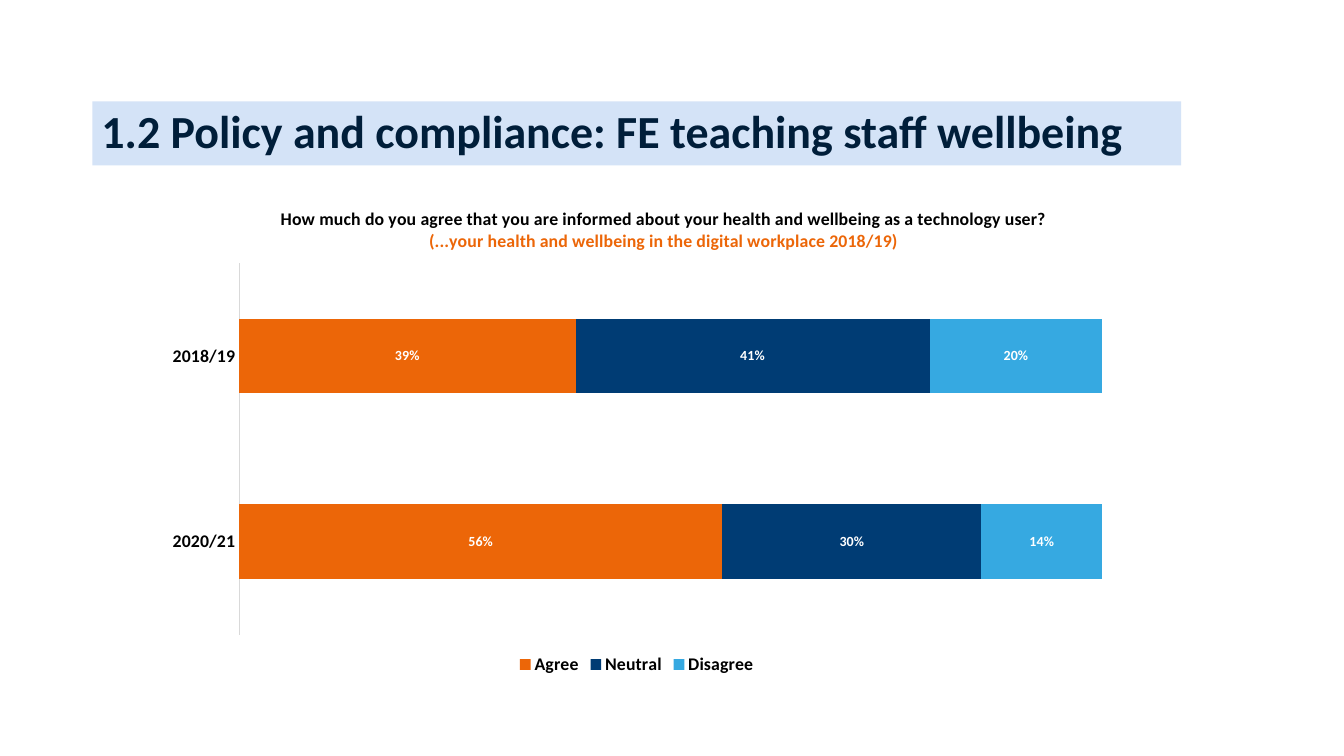
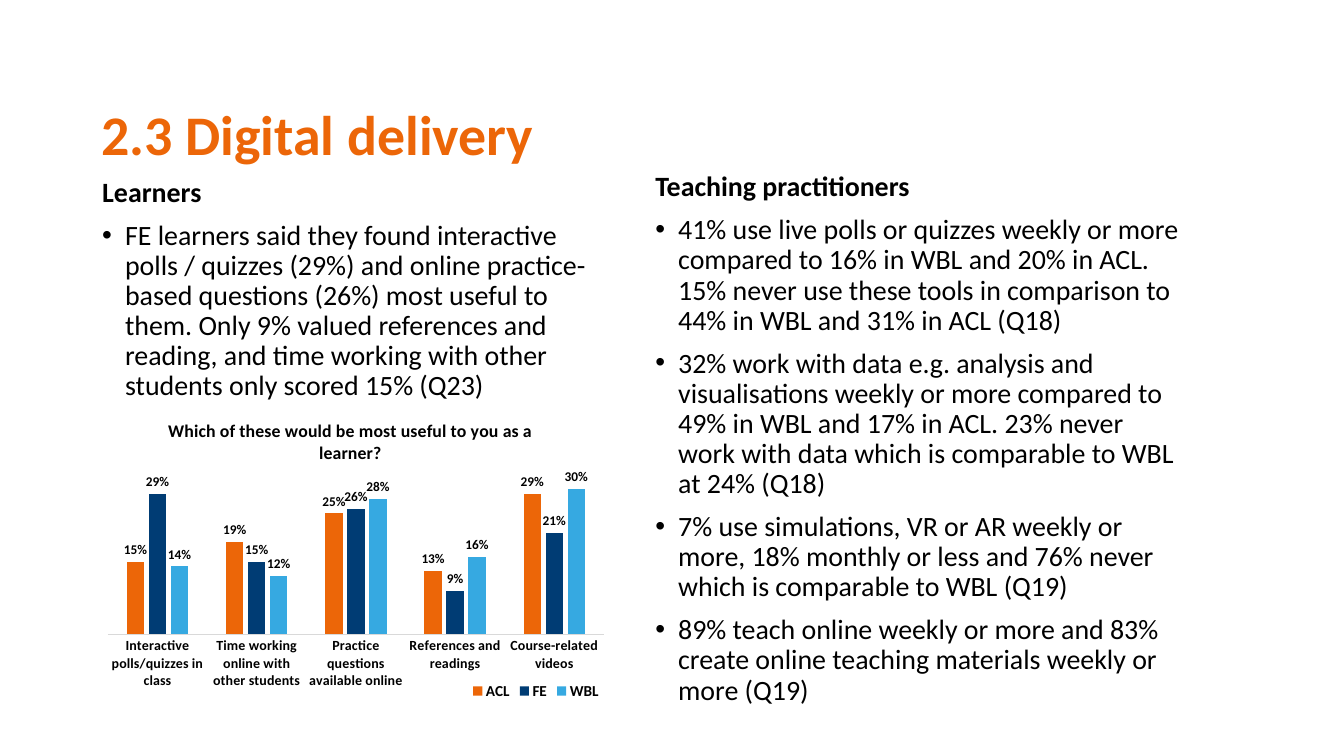
from dataclasses import dataclass

from lxml import etree
from pptx import Presentation
from pptx.chart.data import CategoryChartData
from pptx.dml.color import RGBColor
from pptx.enum.chart import XL_CHART_TYPE, XL_LABEL_POSITION, XL_LEGEND_POSITION, XL_TICK_MARK
from pptx.enum.text import MSO_ANCHOR, MSO_AUTO_SIZE, PP_ALIGN
from pptx.oxml.ns import qn
from pptx.util import Inches, Pt

STACKED, CLUSTERED = XL_CHART_TYPE.BAR_STACKED, XL_CHART_TYPE.COLUMN_CLUSTERED
CENTER, OUTSIDE = XL_LABEL_POSITION.CENTER, XL_LABEL_POSITION.OUTSIDE_END
BOTTOM, NO_TICK = XL_LEGEND_POSITION.BOTTOM, XL_TICK_MARK.NONE
LEFT, MIDDLE, TOP = PP_ALIGN.LEFT, MSO_ANCHOR.MIDDLE, MSO_ANCHOR.TOP
NO_FIT = MSO_AUTO_SIZE.NONE

FONT = "Calibri"
COLORS = {
    "ink": "000000", "white": "FFFFFF", "midnight": "001E3A", "band": "D4E3F7",
    "orange": "EC6608", "navy": "003C74", "sky": "36A9E1", "axis": "D9D9D9",
}
SERIES_COLORS = ("orange", "navy", "sky")


@dataclass(frozen=True)
class Box:
    left: float
    top: float
    width: float
    height: float

    def lengths(self) -> tuple:
        return tuple(Inches(n) for n in (self.left, self.top, self.width, self.height))


@dataclass(frozen=True)
class ChartSpec:
    kind: int
    box: Box
    title: tuple          # (line, colour) pairs
    categories: tuple
    series: dict
    plot: Box             # fractions of the chart area
    title_corner: tuple
    gap: int
    overlap: int
    maximum: float
    axis_size: float
    legend_size: float
    label_size: float
    label_color: str
    label_position: int
    reverse: bool = False
    legend_corner: tuple = ()


@dataclass(frozen=True)
class TextColumn:
    box: Box
    heading: str
    bullets: tuple


def rgb(name: str) -> RGBColor:
    return RGBColor.from_string(COLORS[name])


def format_font(font, size: float, color: str = "ink", bold: bool = True) -> None:
    font.name, font.size, font.bold = FONT, Pt(size), bold
    font.color.rgb = rgb(color)


def write_text(paragraph, text: str, *, size: float, color: str = "ink", bold: bool = True,
               spacing: float = 0.9, before: float = 0, bullet: bool = False) -> None:
    """Fill one paragraph with formatted text."""
    if bullet:
        properties = paragraph._p.get_or_add_pPr()
        properties.set("marL", str(Inches(0.25)))
        properties.set("indent", str(-Inches(0.25)))
        etree.SubElement(properties, qn("a:buFont")).set("typeface", "Arial")
        etree.SubElement(properties, qn("a:buChar")).set("char", "•")
    paragraph.line_spacing = spacing
    paragraph.space_before = Pt(before)
    run = paragraph.add_run()
    run.text = text
    format_font(run.font, size, color, bold)


def add_titled_slide(presentation, text: str, box: Box, size: float, color: str,
                     band: bool = False):
    """Add a title-only slide and style its title."""
    slide = presentation.slides.add_slide(presentation.slide_layouts[5])
    title = slide.shapes.title
    title.left, title.top, title.width, title.height = box.lengths()
    if band:
        title.fill.solid()
        title.fill.fore_color.rgb = rgb("band")
    frame = title.text_frame
    frame.auto_size, frame.vertical_anchor, frame.word_wrap = NO_FIT, MIDDLE, True
    paragraph = frame.paragraphs[0]
    paragraph.alignment = LEFT
    write_text(paragraph, text, size=size, color=color)
    return slide


def add_text_column(slide, column: TextColumn) -> None:
    frame = slide.shapes.add_textbox(*column.box.lengths()).text_frame
    frame.word_wrap, frame.auto_size, frame.vertical_anchor = True, NO_FIT, TOP
    write_text(frame.paragraphs[0], column.heading, size=22)
    for text in column.bullets:
        write_text(frame.add_paragraph(), text, size=22, bold=False, before=10, bullet=True)


def set_layout(element, index: int, **fractions: float) -> None:
    """Give a chart part a manual position in fractions of the chart area."""
    for old in element.findall(qn("c:layout")):
        element.remove(old)
    layout = etree.Element(qn("c:layout"))
    manual = etree.SubElement(layout, qn("c:manualLayout"))
    values = {"xMode": "edge", "yMode": "edge", **fractions}
    if "w" in fractions:
        values = {"layoutTarget": "inner", **values}
    for tag, value in values.items():
        etree.SubElement(manual, qn(f"c:{tag}")).set("val", str(value))
    element.insert(index, layout)


def add_survey_chart(slide, spec: ChartSpec) -> None:
    data = CategoryChartData(number_format="0%")
    data.categories = spec.categories
    for name, values in spec.series.items():
        data.add_series(name, values)
    chart = slide.shapes.add_chart(spec.kind, *spec.box.lengths(), data).chart
    format_font(chart.font, 10, bold=False)

    # Title
    chart.has_title = True
    frame = chart.chart_title.text_frame
    for index, (line, color) in enumerate(spec.title):
        paragraph = frame.add_paragraph() if index else frame.paragraphs[0]
        write_text(paragraph, line, size=14, color=color, spacing=1.0)
    chart.chart_title.include_in_layout = False

    # Axes
    categories, values = chart.category_axis, chart.value_axis
    categories.major_tick_mark = categories.minor_tick_mark = NO_TICK
    categories.has_major_gridlines = values.has_major_gridlines = False
    categories.reverse_order = spec.reverse
    categories.format.line.color.rgb = rgb("axis")
    categories.format.line.width = Pt(0.75)
    format_font(categories.tick_labels.font, spec.axis_size)
    values.minimum_scale, values.maximum_scale = 0, spec.maximum
    values.visible = False

    # Bars and labels
    plot = chart.plots[0]
    plot.gap_width, plot.overlap, plot.vary_by_categories = spec.gap, spec.overlap, False
    for series, color in zip(plot.series, SERIES_COLORS):
        series.format.fill.solid()
        series.format.fill.fore_color.rgb = rgb(color)
        labels = series.data_labels
        labels.show_value = True
        labels.number_format, labels.number_format_is_linked = "0%", False
        labels.position = spec.label_position
        format_font(labels.font, spec.label_size, spec.label_color)

    # Legend and positions
    chart.has_legend = True
    chart.legend.position, chart.legend.include_in_layout = BOTTOM, False
    format_font(chart.legend.font, spec.legend_size)
    root = chart.element.find(qn("c:chart"))
    set_layout(root.find(qn("c:title")), 1, x=spec.title_corner[0], y=spec.title_corner[1])
    area = spec.plot
    set_layout(root.find(qn("c:plotArea")), 0,
               x=area.left, y=area.top, w=area.width, h=area.height)
    if spec.legend_corner:
        set_layout(root.find(qn("c:legend")), 1,
                   x=spec.legend_corner[0], y=spec.legend_corner[1])


WELLBEING = ChartSpec(
    kind=STACKED, box=Box(1.66, 2.01, 10.61, 5.42),
    title=(
        ("How much do you agree that you are informed about your health and wellbeing "
         "as a technology user?", "ink"),
        ("(...your health and wellbeing in the digital workplace 2018/19)", "orange"),
    ),
    categories=("2018/19", "2020/21"),
    series={"Agree": (0.39, 0.56), "Neutral": (0.41, 0.3), "Disagree": (0.2, 0.14)},
    plot=Box(0.09, 0.16, 0.89, 0.75), title_corner=(0.13, 0.04),
    gap=150, overlap=100, maximum=1, axis_size=14, legend_size=14,
    label_size=11, label_color="white", label_position=CENTER, reverse=True,
)

USEFULNESS = ChartSpec(
    kind=CLUSTERED, box=Box(1.01, 4.35, 5.71, 3.36),
    title=(("Which of these would be most useful to you as a", "ink"), ("learner?", "ink")),
    categories=("Interactive polls/quizzes in class", "Time working online with other students",
                "Practice questions available online", "References and readings",
                "Course-related videos"),
    series={"ACL": (0.15, 0.19, 0.25, 0.13, 0.29), "FE": (0.29, 0.15, 0.26, 0.09, 0.21),
            "WBL": (0.14, 0.12, 0.28, 0.16, 0.3)},
    plot=Box(0.03, 0.22, 0.95, 0.55), title_corner=(0.14, 0.06),
    gap=219, overlap=-27, maximum=0.35, axis_size=11, legend_size=12,
    label_size=10.5, label_color="ink", label_position=OUTSIDE, legend_corner=(0.72, 0.92),
)

COLUMNS = (
    TextColumn(Box(1.02, 1.9, 5.7, 5.42), "Learners", (
        "FE learners said they found interactive polls / quizzes (29%) and online "
        "practice-based questions (26%) most useful to them. Only 9% valued references and "
        "reading, and time working with other students only scored 15% (Q23)",
    )),
    TextColumn(Box(7.07, 1.84, 5.94, 5.59), "Teaching practitioners", (
        "41% use live polls or quizzes weekly or more compared to 16% in WBL and 20% in ACL. "
        "15% never use these tools in comparison to 44% in WBL and 31% in ACL (Q18)",
        "32% work with data e.g. analysis and visualisations weekly or more compared to 49% "
        "in WBL and 17% in ACL. 23% never work with data which is comparable to WBL at 24% (Q18)",
        "7% use simulations, VR or AR weekly or more, 18% monthly or less and 76% never "
        "which is comparable to WBL (Q19)",
        "89% teach online weekly or more and 83% create online teaching materials weekly "
        "or more (Q19)",
    )),
)


def main() -> None:
    presentation = Presentation()
    presentation.slide_width, presentation.slide_height = Inches(14.7), Inches(8.27)

    # Staff wellbeing
    slide = add_titled_slide(
        presentation, "1.2 Policy and compliance: FE teaching staff wellbeing",
        Box(1.01, 1.11, 11.91, 0.7), 36.2, "midnight", band=True)
    add_survey_chart(slide, WELLBEING)

    # Digital delivery
    slide = add_titled_slide(presentation, "2.3 Digital delivery",
                             Box(1.01, 1.11, 11.41, 0.78), 44, "orange")
    for column in COLUMNS:
        add_text_column(slide, column)
    add_survey_chart(slide, USEFULNESS)

    presentation.save("out.pptx")


if __name__ == "__main__":
    main()
